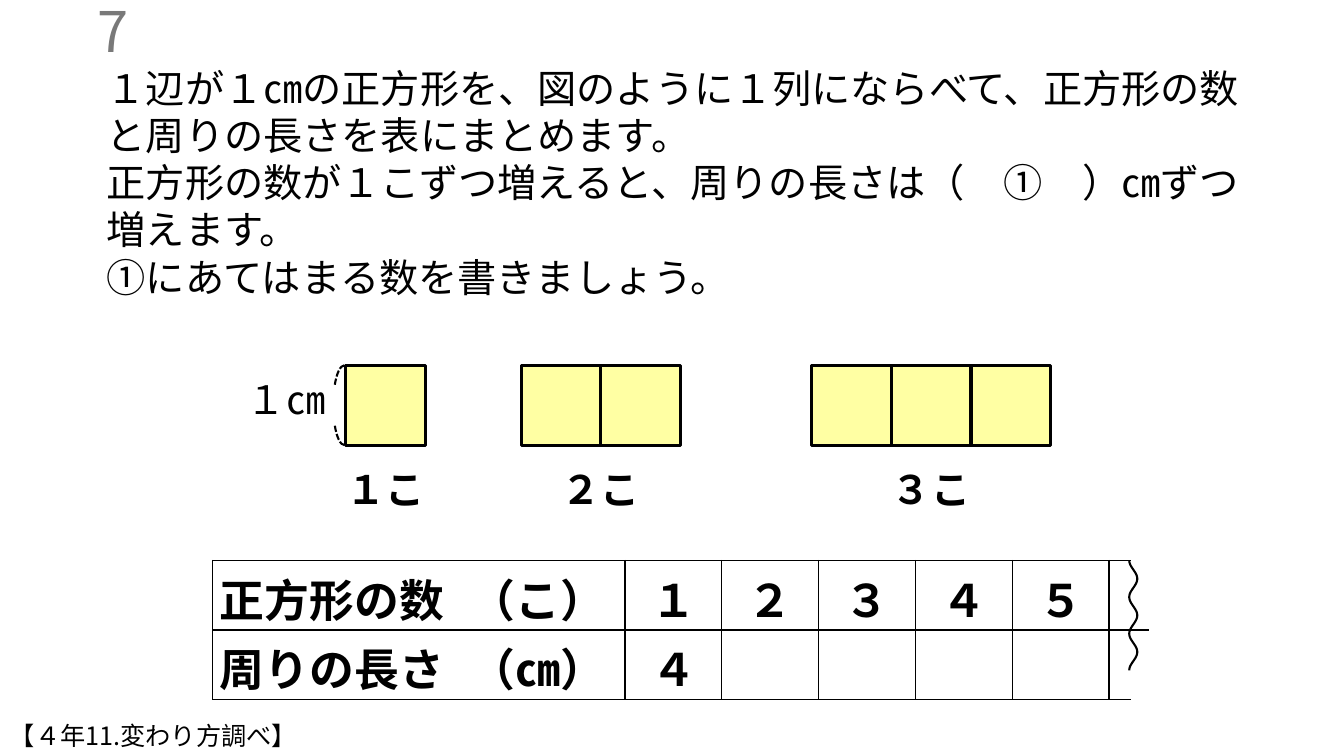
from math import cos, pi

from lxml import etree
from pptx import Presentation
from pptx.dml.color import RGBColor
from pptx.enum.dml import MSO_LINE
from pptx.enum.shapes import MSO_SHAPE
from pptx.enum.text import MSO_ANCHOR, MSO_AUTO_SIZE, PP_ALIGN
from pptx.oxml.ns import qn
from pptx.util import Inches, Pt

RECT, ARC = MSO_SHAPE.RECTANGLE, MSO_SHAPE.ARC
LEFT, CENTER, RIGHT = PP_ALIGN.LEFT, PP_ALIGN.CENTER, PP_ALIGN.RIGHT
TOP, MIDDLE = MSO_ANCHOR.TOP, MSO_ANCHOR.MIDDLE
NO_AUTOFIT = MSO_AUTO_SIZE.NONE
DASH = MSO_LINE.SQUARE_DOT

FONT = "Noto Sans CJK JP"
BLACK = RGBColor(0x00, 0x00, 0x00)
GRAY = RGBColor(0x79, 0x79, 0x79)
YELLOW = RGBColor(0xFF, 0xFF, 0xA3)

SIDE = 0.79
SQUARE_TOP = 3.63
SQUARE_GROUPS = [(3.43, "１こ"), (5.17, "２こ"), (8.05, "３こ")]
QUESTION = [
    "１辺が１㎝の正方形を、図のように１列にならべて、正方形の数と周りの長さを表にまとめます。",
    "正方形の数が１こずつ増えると、周りの長さは（　①　）㎝ずつ増えます。",
    "①にあてはまる数を書きましょう。",
]
TABLE_LEFT, TABLE_TOP, ROW_HEIGHT = 2.11, 5.56, 0.55
COLUMNS = [2.49, 1.6] + [0.96] * 5 + [0.22, 0.07]
ROWS = [
    ["正方形の数", "（こ）", "１", "２", "３", "４", "５", "", ""],
    ["周りの長さ", "（㎝）", "４", "", "", "", "", "", ""],
]
COLUMN_SIDES = {0: "LTB", 1: "RTB", 7: "LTB"}
EDGE_SIDES = ["B", "T"]


def place(s, left, top, width, height):
    """Move and size a shape, in inches."""
    s.left, s.top = Inches(left), Inches(top)
    s.width, s.height = Inches(width), Inches(height)


def add_run(p, text, size, color=BLACK, bold=False):
    """Add a formatted run for Latin and East Asian text."""
    r = p.add_run()
    r.text = text
    r.font.size, r.font.bold = Pt(size), bold
    r.font.color.rgb = color
    r.font.name = FONT
    ea = etree.SubElement(r.font._element, qn("a:ea"))
    ea.set("typeface", FONT)


def write(s, lines, size, align=LEFT, color=BLACK, bold=False, anchor=TOP):
    """Fill a text shape with plain paragraphs."""
    tf = s.text_frame
    tf.word_wrap, tf.auto_size, tf.vertical_anchor = True, NO_AUTOFIT, anchor
    for i, line in enumerate(lines):
        p = tf.paragraphs[0] if i == 0 else tf.add_paragraph()
        pPr = p._p.get_or_add_pPr()
        pPr.set("marL", "0")
        pPr.set("indent", "0")
        etree.SubElement(pPr, qn("a:buNone"))
        p.alignment, p.line_spacing = align, 1.0
        p.space_before = p.space_after = Pt(0)
        add_run(p, line, size, color, bold)


def add_label(slide, box, text, size, align=LEFT, bold=False):
    """Add a text box with one line."""
    s = slide.shapes.add_textbox(*map(Inches, box))
    write(s, [text], size, align, bold=bold)


def set_outline(s, width):
    """Give a shape a black outline and no shadow."""
    s.shadow.inherit = False
    s.line.color.rgb = BLACK
    s.line.width = Pt(width)


def add_squares(slide, left, count, text):
    """Add a row of squares with its count centred below."""
    for i in range(count):
        box = (left + i * SIDE, SQUARE_TOP, SIDE, SIDE)
        s = slide.shapes.add_shape(RECT, *map(Inches, box))
        s.fill.solid()
        s.fill.fore_color.rgb = YELLOW
        set_outline(s, 2.25)
    middle = left + count * SIDE / 2
    add_label(slide, (middle - 0.56, 4.57, 1.12, 0.57), text, 28, CENTER, True)


def add_side_arc(slide, flipped):
    """Add one dashed end of the arc that marks the side length."""
    box = (3.02, 3.91, SIDE, 0.22)
    s = slide.shapes.add_shape(ARC, *map(Inches, box))
    s.adjustments[0], s.adjustments[1] = 201.04, 0
    s.rotation = 270
    if flipped:
        s._element.spPr.xfrm.set("flipH", "1")
    s.fill.background()
    set_outline(s, 1.5)
    s.line.dash_style = DASH


def set_borders(cell, sides):
    """Draw the named cell sides in black and hide the others."""
    tcPr = cell._tc.get_or_add_tcPr()
    for i, side in enumerate("LRTB"):
        ln = etree.Element(qn("a:ln" + side), w=str(Pt(1)))
        if side in sides:
            fill = etree.SubElement(ln, qn("a:solidFill"))
            etree.SubElement(fill, qn("a:srgbClr"), val=str(BLACK))
        else:
            etree.SubElement(ln, qn("a:noFill"))
        tcPr.insert(i, ln)


def add_length_table(slide):
    """Add the table of square counts and perimeters."""
    box = (TABLE_LEFT, TABLE_TOP, sum(COLUMNS), ROW_HEIGHT * len(ROWS))
    s = slide.shapes.add_table(len(ROWS), len(COLUMNS), *map(Inches, box))
    table = s.table
    table.first_row = table.horz_banding = False
    for column, width in zip(table.columns, COLUMNS):
        column.width = Inches(width)
    for i, row in enumerate(ROWS):
        table.rows[i].height = Inches(ROW_HEIGHT)
        for j, text in enumerate(row):
            cell = table.cell(i, j)
            cell.fill.background()
            cell.margin_left = cell.margin_right = Inches(0.07)
            cell.margin_top = cell.margin_bottom = 0
            last = j == len(COLUMNS) - 1
            sides = EDGE_SIDES[i] if last else COLUMN_SIDES.get(j, "LRTB")
            set_borders(cell, sides)
            if text:
                p = cell.text_frame.paragraphs[0]
                p.alignment = LEFT if j < 2 else CENTER
                p.line_spacing, p.space_after = 1.07, Pt(8)
                add_run(p, text, 32, bold=True)


def add_wave(slide, left, top, width, height, waves=3, steps=72):
    """Add the wavy line that cuts off the table."""
    points = [
        (Inches(left + width * (1 - cos(2 * pi * waves * i / steps)) / 2),
         Inches(top + height * i / steps))
        for i in range(steps + 1)
    ]
    builder = slide.shapes.build_freeform(*points[0])
    builder.add_line_segments(points[1:], close=False)
    s = builder.convert_to_shape()
    s.fill.background()
    set_outline(s, 1.5)


def main():
    """Build the slide and save it."""
    prs = Presentation()
    prs.slide_width, prs.slide_height = Inches(13.33), Inches(7.5)
    slide = prs.slides.add_slide(prs.slide_layouts[1])
    title, body = slide.shapes.title, slide.placeholders[1]
    place(body, 0.96, 0.59, 11.53, 2.46)
    write(body, QUESTION, 28)
    place(title, -1.63, 0.1, 3, 0.4)
    write(title, ["7"], 40, RIGHT, GRAY, anchor=MIDDLE)
    for count, (left, text) in enumerate(SQUARE_GROUPS, 1):
        add_squares(slide, left, count, text)
    for flipped in (False, True):
        add_side_arc(slide, flipped)
    add_label(slide, (2.35, 3.67, 1.11, 0.57), "１㎝", 28)
    add_length_table(slide)
    add_wave(slide, 11.2, TABLE_TOP, 0.08, 1.09)
    add_label(slide, (0, 7.1, 7.49, 0.4), "【４年11.変わり方調べ】", 18)
    prs.save("out.pptx")


if __name__ == "__main__":
    main()
